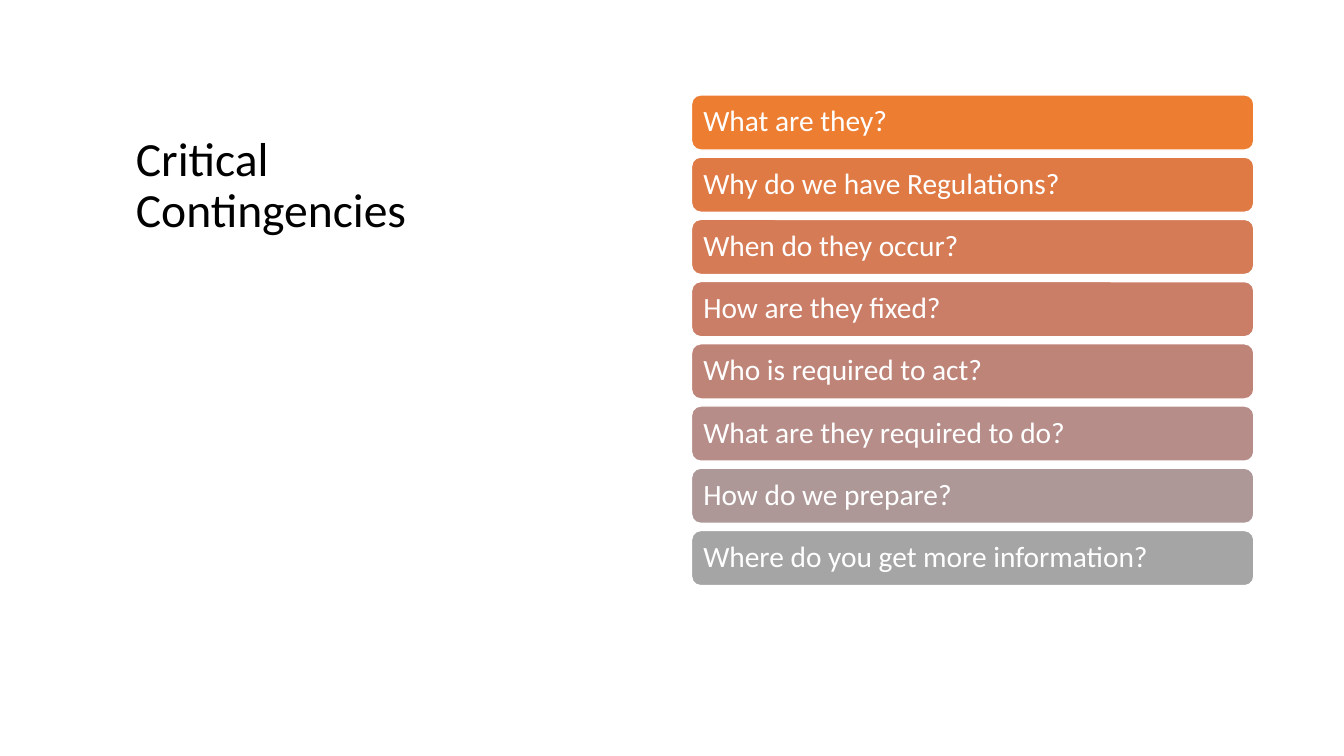
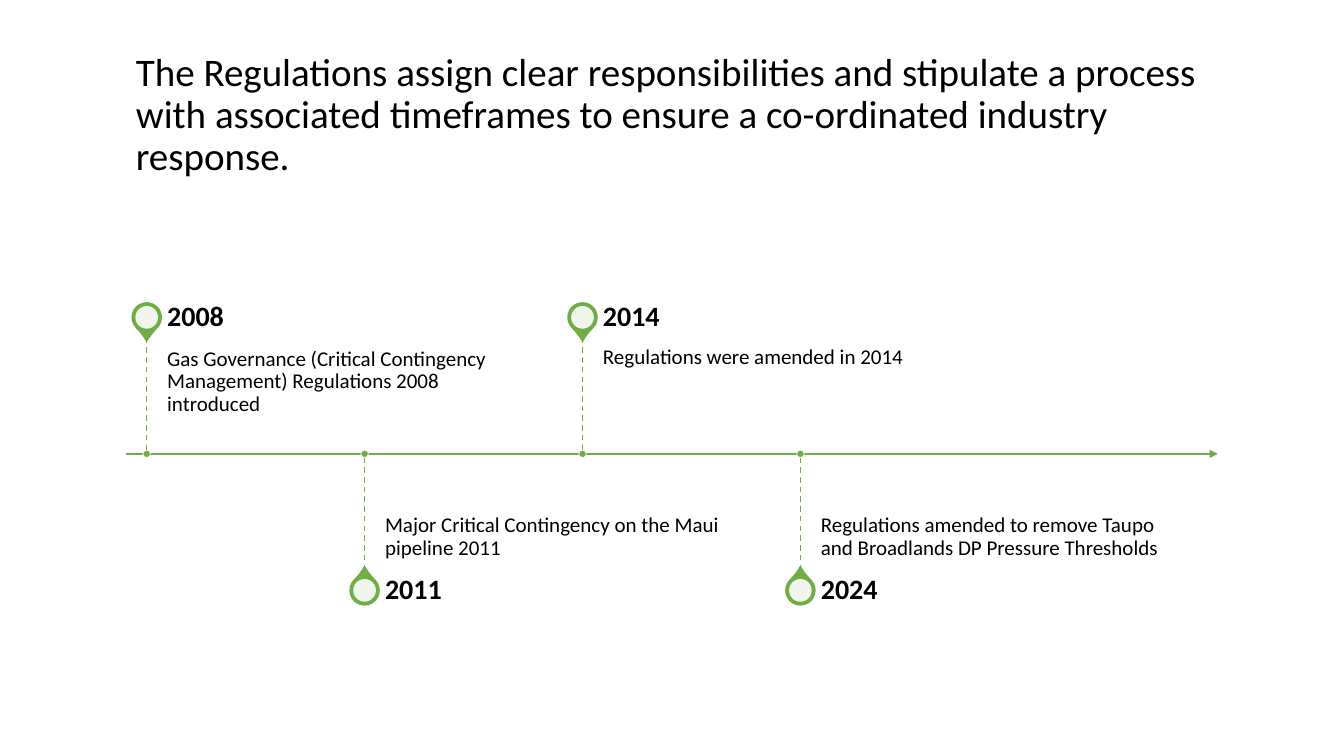
"""Build two slides on critical contingencies: a question list and a timeline."""
from lxml.etree import SubElement
from pptx import Presentation
from pptx.dml.color import RGBColor
from pptx.enum.dml import MSO_LINE
from pptx.enum.shapes import MSO_CONNECTOR, MSO_SHAPE
from pptx.enum.text import MSO_ANCHOR, PP_ALIGN
from pptx.oxml.ns import qn
from pptx.util import Pt

COLORS = {name: RGBColor.from_string(value) for name, value in {
    "black": "000000", "white": "FFFFFF", "green": "70AD47"}.items()}
FONT = "Calibri"
TITLE_LEFT = 90
TITLE_MARGINS = (7.2, 3.6, 7.2, 3.6)


def write_text(shape, text, size, anchor, margins, color="black", bold=False):
    frame = shape.text_frame
    frame.word_wrap = True
    frame.vertical_anchor = anchor
    frame.margin_left, frame.margin_top, frame.margin_right, frame.margin_bottom = map(Pt, margins)
    paragraph = frame.paragraphs[0]
    paragraph.text = text
    paragraph.alignment = PP_ALIGN.LEFT
    paragraph.line_spacing = 0.9
    paragraph.font.name = FONT
    paragraph.font.size = Pt(size)
    paragraph.font.bold = bold
    paragraph.font.color.rgb = COLORS[color]


def add_line(slide, start_x, start_y, end_x, end_y, width, dashed=False, arrow=False):
    connector = slide.shapes.add_connector(
        MSO_CONNECTOR.STRAIGHT, Pt(start_x), Pt(start_y), Pt(end_x), Pt(end_y))
    connector.line.color.rgb = COLORS["green"]
    connector.line.width = Pt(width)
    if dashed:
        connector.line.dash_style = MSO_LINE.DASH
    properties = connector._element.spPr
    if arrow:
        SubElement(properties.find(qn("a:ln")), qn("a:tailEnd"), type="triangle")
    SubElement(properties, qn("a:effectLst"))


presentation = Presentation()
presentation.slide_width, presentation.slide_height = Pt(960), Pt(540)
blank_layout = presentation.slide_layouts[6]

slide = presentation.slides.add_slide(blank_layout)
title = slide.shapes.add_textbox(Pt(TITLE_LEFT), Pt(93), Pt(278), Pt(123))
write_text(title, "Critical Contingencies", 34, MSO_ANCHOR.TOP, TITLE_MARGINS)

questions = [
    ("What are they?", "ED7D31"),
    ("Why do we have Regulations?", "E07A44"),
    ("When do they occur?", "D57B56"),
    ("How are they fixed?", "CA7E67"),
    ("Who is required to act?", "BF8478"),
    ("What are they required to do?", "B68D88"),
    ("How do we prepare?", "AD9897"),
    ("Where do you get more information?", "A5A5A5"),
]
for index, (question, fill) in enumerate(questions):
    bar = slide.shapes.add_shape(
        MSO_SHAPE.ROUNDED_RECTANGLE, Pt(494), Pt(67.8 + 44.45 * index), Pt(401.6), Pt(39.4))
    bar.shadow.inherit = False
    bar.fill.solid()
    bar.fill.fore_color.rgb = RGBColor.from_string(fill)
    bar.line.color.rgb = COLORS["white"]
    bar.line.width = Pt(1)
    write_text(bar, question, 21, MSO_ANCHOR.MIDDLE, (6.5, 0, 6.5, 0), "white")

slide = presentation.slides.add_slide(blank_layout)
title = slide.shapes.add_textbox(Pt(TITLE_LEFT), Pt(52.5), Pt(780), Pt(79))
write_text(title, "The Regulations assign clear responsibilities and stipulate a process with "
           "associated timeframes to ensure a co-ordinated industry response.",
           27.9, MSO_ANCHOR.BOTTOM, TITLE_MARGINS)

AXIS_Y = 324.2
STEM_LENGTH = 83
HEAD_DISTANCE = 97.5
YEAR_HEIGHT = 29.4
add_line(slide, TITLE_LEFT, AXIS_Y, 870, AXIS_Y, 1.5, arrow=True)

events = [
    ("2008", "Gas Governance (Critical Contingency Management) Regulations 2008 introduced"),
    ("2011", "Major Critical Contingency on the Maui pipeline 2011"),
    ("2014", "Regulations were amended in 2014"),
    ("2024", "Regulations amended to remove Taupo and Broadlands DP Pressure Thresholds"),
]
for index, (year, description) in enumerate(events):
    pin_x = 104.8 + 155.65 * index
    text_left = pin_x + 14.6
    above = index % 2 == 0
    side = -1 if above else 1
    head_y = AXIS_Y + side * HEAD_DISTANCE
    add_line(slide, pin_x, AXIS_Y + side * STEM_LENGTH, pin_x, AXIS_Y, 1, dashed=True)

    for kind, center_y, size, fill, outline, outline_width in (
            (MSO_SHAPE.TEAR, head_y, 20.8, "green", "green", 1),
            (MSO_SHAPE.OVAL, head_y, 16.2, "white", None, 0),
            (MSO_SHAPE.OVAL, AXIS_Y, 5.2, "green", "white", 0.5)):
        marker = slide.shapes.add_shape(
            kind, Pt(pin_x - size / 2), Pt(center_y - size / 2), Pt(size), Pt(size))
        marker.shadow.inherit = False
        marker.fill.solid()
        marker.fill.fore_color.rgb = COLORS[fill]
        if outline:
            marker.line.color.rgb = COLORS[outline]
            marker.line.width = Pt(outline_width)
        else:
            marker.line.fill.background()
            fill_color = marker._element.spPr.find(qn("a:solidFill"))[0]
            SubElement(fill_color, qn("a:alpha"), val="90000")
        if kind == MSO_SHAPE.TEAR:
            marker.adjustments[0] = 1.15
            marker.rotation = 135 if above else 315

    description_top = AXIS_Y - STEM_LENGTH if above else AXIS_Y
    description_box = slide.shapes.add_textbox(
        Pt(text_left), Pt(description_top), Pt(259.5), Pt(STEM_LENGTH))
    if above:
        write_text(description_box, description, 15, MSO_ANCHOR.TOP, (0, 7.4, 7.4, 11.2))
    else:
        write_text(description_box, description, 15, MSO_ANCHOR.BOTTOM, (0, 11.2, 0, 7.4))
    year_box = slide.shapes.add_textbox(
        Pt(text_left), Pt(head_y - YEAR_HEIGHT / 2), Pt(259.5), Pt(YEAR_HEIGHT))
    write_text(year_box, year, 20, MSO_ANCHOR.MIDDLE, (0, 0, 10, 0), bold=True)

presentation.save("out.pptx")
